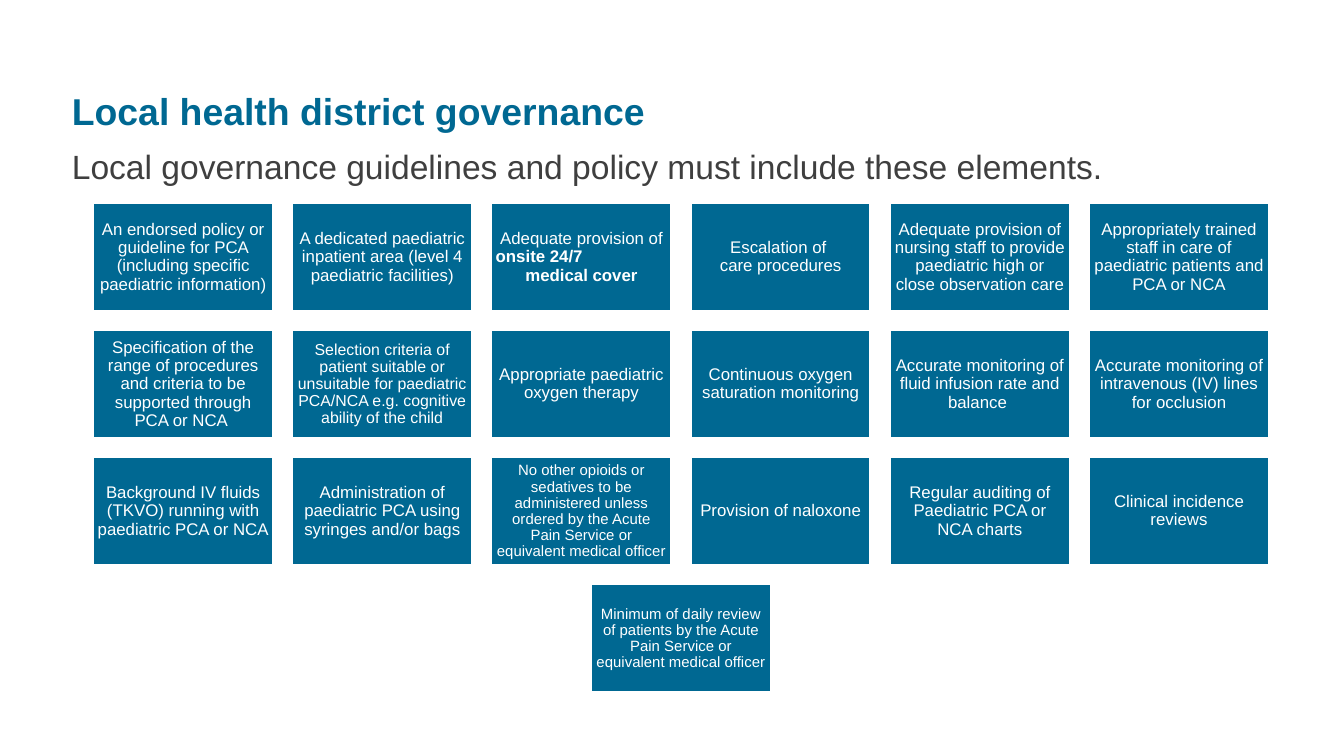
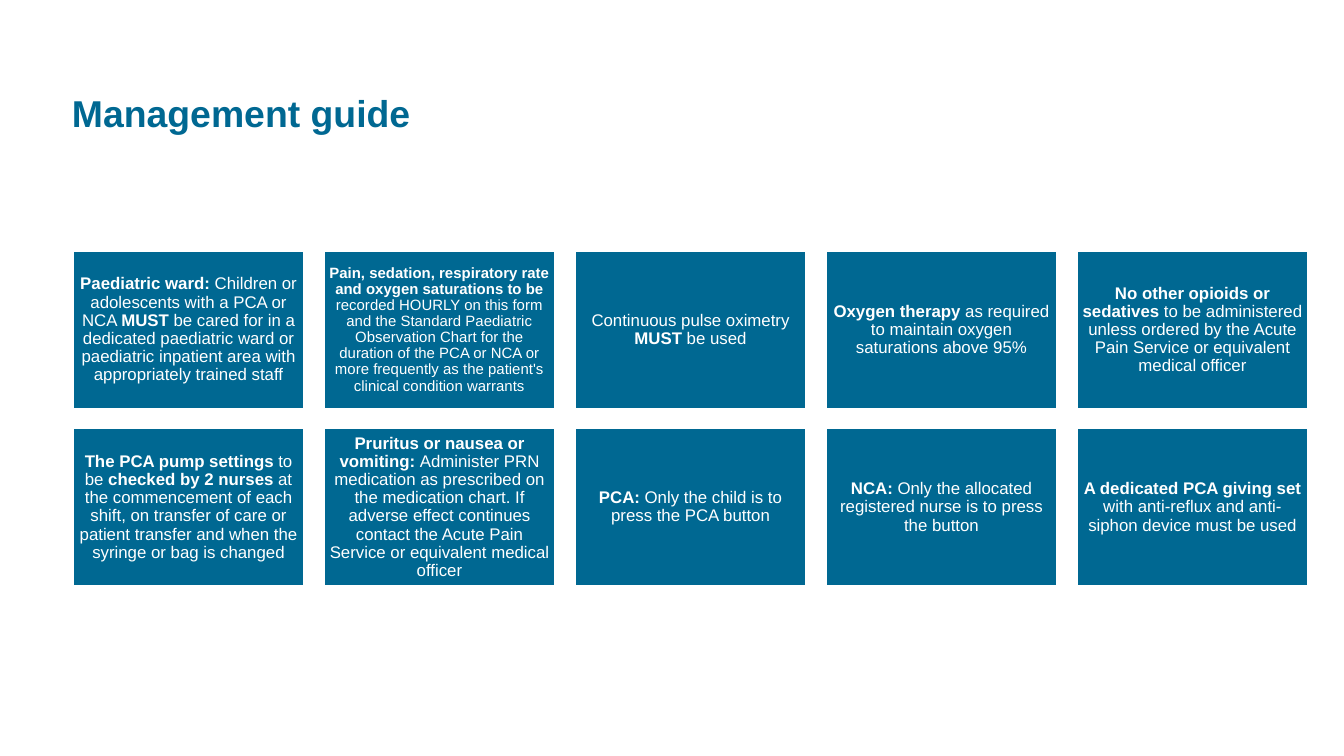
"""Build two slides of governance and management cards for paediatric PCA and NCA."""
import dataclasses
import typing

import pptx
import pptx.dml.color
import pptx.enum.shapes
import pptx.enum.text
import pptx.presentation
import pptx.slide
import pptx.text.text
import pptx.util

Align = pptx.enum.text.PP_ALIGN
Anchor = pptx.enum.text.MSO_ANCHOR
Color = pptx.dml.color.RGBColor
EMU_PER_PX = 4572


@dataclasses.dataclass(frozen=True)
class Theme:
    """Colours, font and type sizes of the deck."""
    teal: Color = Color(0x00, 0x68, 0x92)
    charcoal: Color = Color(0x3F, 0x3F, 0x3F)
    white: Color = Color(0xFF, 0xFF, 0xFF)
    font: str = "Arial"
    heading: float = 20
    lead: float = 18
    card: float = 9
    card_snug: float = 8.5
    card_small: float = 8
    border: float = 1.5


THEME = Theme()


@dataclasses.dataclass(frozen=True)
class Card:
    """Card wording, with ** around bold words and one alignment per line."""
    text: str
    size: float = THEME.card
    aligns: tuple[Align, ...] = (Align.CENTER, Align.CENTER)


@dataclasses.dataclass(frozen=True)
class Grid:
    """Outer edges of a card grid and the size of its cells, in px."""
    left: int
    top: int
    right: int
    bottom: int
    columns: int
    rows: int
    card_width: int
    card_height: int


@dataclasses.dataclass(frozen=True)
class Page:
    """One slide: heading, heading width and spacing, lead sentence and cards."""
    heading: str
    heading_width: int
    heading_spacing: float
    lead: str
    grid: Grid
    cards: tuple[Card, ...]


PAGES = (
    Page(
        "Local health district governance", 1814, 0.9,
        "Local governance guidelines and policy must include these elements.",
        Grid(138, 302, 1889, 1031, 6, 4, 269, 162),
        (
            Card("An endorsed policy or guideline for PCA (including specific paediatric information)"),
            Card("A dedicated paediatric inpatient area (level 4 paediatric facilities)"),
            Card("Adequate provision of\n**onsite 24/7**\n**medical cover**",
                 aligns=(Align.CENTER, Align.LEFT, Align.CENTER)),
            Card("Escalation of \ncare procedures"),
            Card("Adequate provision of nursing staff to provide paediatric high or close observation care"),
            Card("Appropriately trained staff in care of paediatric patients and PCA or NCA"),
            Card("Specification of the range of procedures and criteria to be supported through PCA or NCA "),
            Card("Selection criteria of patient suitable or unsuitable for paediatric PCA/NCA "
                 "e.g. cognitive ability of the child", THEME.card_snug),
            Card("Appropriate paediatric oxygen therapy"),
            Card("Continuous oxygen saturation monitoring"),
            Card("Accurate monitoring of fluid infusion rate and balance "),
            Card("Accurate monitoring of intravenous (IV) lines for occlusion"),
            Card("Background IV fluids (TKVO) running with paediatric PCA or NCA"),
            Card("Administration of paediatric PCA using syringes and/or bags"),
            Card("No other opioids or sedatives to be administered unless ordered by the "
                 "Acute Pain Service or equivalent medical officer", THEME.card_small),
            Card("Provision of naloxone"),
            Card("Regular auditing of Paediatric PCA or NCA charts"),
            Card("Clinical incidence reviews"),
            Card("Minimum of daily review of patients by the Acute Pain Service or "
                 "equivalent medical officer", THEME.card_small),
        ),
    ),
    Page(
        "Management guide", 1338, 1.0, "",
        Grid(108, 373, 1947, 873, 5, 2, 345, 236),
        (
            Card("**Paediatric ward: **Children or adolescents with a PCA or NCA **MUST **be cared for "
                 "in a dedicated paediatric ward or paediatric inpatient area with "
                 "appropriately trained staff"),
            Card("**Pain, sedation, respiratory rate and oxygen saturations to be **recorded HOURLY on "
                 "this form and the Standard Paediatric Observation Chart for the duration of the "
                 "PCA or NCA or more frequently as the patient's clinical condition warrants",
                 THEME.card_small),
            Card("Continuous pulse oximetry **MUST **be used"),
            Card("**Oxygen therapy **as required to maintain oxygen saturations above 95%"),
            Card("**No other opioids or sedatives **to be administered unless ordered by the "
                 "Acute Pain Service or equivalent medical officer"),
            Card("**The PCA pump settings **to be **checked by 2 nurses **at the commencement of each "
                 "shift, on transfer of care or patient transfer and when the syringe or bag is changed"),
            Card("**Pruritus or nausea or vomiting: **Administer PRN medication as prescribed on the "
                 "medication chart. If adverse effect continues contact the Acute Pain Service or "
                 "equivalent medical officer"),
            Card("**PCA: **Only the child is to press the PCA button"),
            Card("**NCA: **Only the allocated registered nurse is to press the button"),
            Card("**A dedicated PCA giving set **with anti-reflux and anti-siphon device must be used"),
        ),
    ),
)


def px(length: float) -> pptx.util.Emu:
    """Turn px into EMU."""
    return pptx.util.Emu(round(length * EMU_PER_PX))


def apply(target: typing.Any, formats: dict[str, typing.Any]) -> None:
    """Set each format value on the target."""
    for name, value in formats.items():
        setattr(target, name, value)


def set_frame(frame: pptx.text.text.TextFrame, inset: int, anchor: Anchor) -> None:
    """Set wrapping, anchor and equal margins of a text frame."""
    margins = {f"margin_{side}": px(inset) for side in ("left", "top", "right", "bottom")}
    apply(frame, {"word_wrap": True, "vertical_anchor": anchor, **margins})


def write_line(paragraph: pptx.text.text._Paragraph, text: str, size: float, color: Color,
               align: Align = Align.LEFT, spacing: float = 1.0) -> None:
    """Write one paragraph, with every second ** part in bold."""
    apply(paragraph, {"alignment": align, "line_spacing": spacing})
    for index, part in enumerate(text.split("**")):
        if part:
            run = paragraph.add_run()
            run.text = part
            apply(run.font, {"name": THEME.font, "size": pptx.util.Pt(size), "bold": index % 2 == 1})
            run.font.color.rgb = color


def add_sentence(slide: pptx.slide.Slide, top: int, width: int, text: str, size: float,
                 color: Color, anchor: Anchor, spacing: float = 1.0) -> None:
    """Add a single-line text box at the left margin."""
    sentence = slide.shapes.add_textbox(px(107), px(top), px(width), px(70))
    set_frame(sentence.text_frame, 0, anchor)
    write_line(sentence.text_frame.paragraphs[0], text, size, color, spacing=spacing)


def add_card(slide: pptx.slide.Slide, card: Card, left: float, top: float, grid: Grid) -> None:
    """Add one filled card with its centred wording."""
    tile = slide.shapes.add_shape(pptx.enum.shapes.MSO_SHAPE.RECTANGLE, px(left), px(top),
                                  px(grid.card_width), px(grid.card_height))
    tile.shadow.inherit = False
    tile.fill.solid()
    tile.fill.fore_color.rgb = THEME.teal
    tile.line.color.rgb = THEME.white
    tile.line.width = pptx.util.Pt(THEME.border)
    frame = tile.text_frame
    set_frame(frame, 7, Anchor.MIDDLE)
    for index, (line, align) in enumerate(zip(card.text.split("\n"), card.aligns)):
        paragraph = frame.add_paragraph() if index else frame.paragraphs[0]
        write_line(paragraph, line, card.size, THEME.white, align, 0.9)


def add_cards(slide: pptx.slide.Slide, grid: Grid, cards: tuple[Card, ...]) -> None:
    """Lay the cards out with equal gaps, centring each row."""
    across = (grid.right - grid.left - grid.card_width) / (grid.columns - 1)
    down = (grid.bottom - grid.top - grid.card_height) / (grid.rows - 1)
    for row in range(grid.rows):
        row_cards = cards[row * grid.columns:(row + 1) * grid.columns]
        indent = (grid.columns - len(row_cards)) * across / 2
        for column, card in enumerate(row_cards):
            add_card(slide, card, grid.left + indent + column * across, grid.top + row * down, grid)


def add_page(deck: pptx.presentation.Presentation, page: Page) -> None:
    """Add one slide with its heading, lead sentence and cards."""
    slide = deck.slides.add_slide(deck.slide_layouts[6])
    add_sentence(slide, 133, page.heading_width, f"**{page.heading}**", THEME.heading,
                 THEME.teal, Anchor.MIDDLE, page.heading_spacing)
    add_cards(slide, page.grid, page.cards)
    if page.lead:
        add_sentence(slide, 217, 1772, page.lead, THEME.lead, THEME.charcoal, Anchor.TOP)


def main() -> None:
    """Build and save the deck."""
    deck = pptx.Presentation()
    apply(deck, {"slide_width": px(2000), "slide_height": px(1125)})
    for page in PAGES:
        add_page(deck, page)
    deck.save("out.pptx")


if __name__ == "__main__":
    main()
